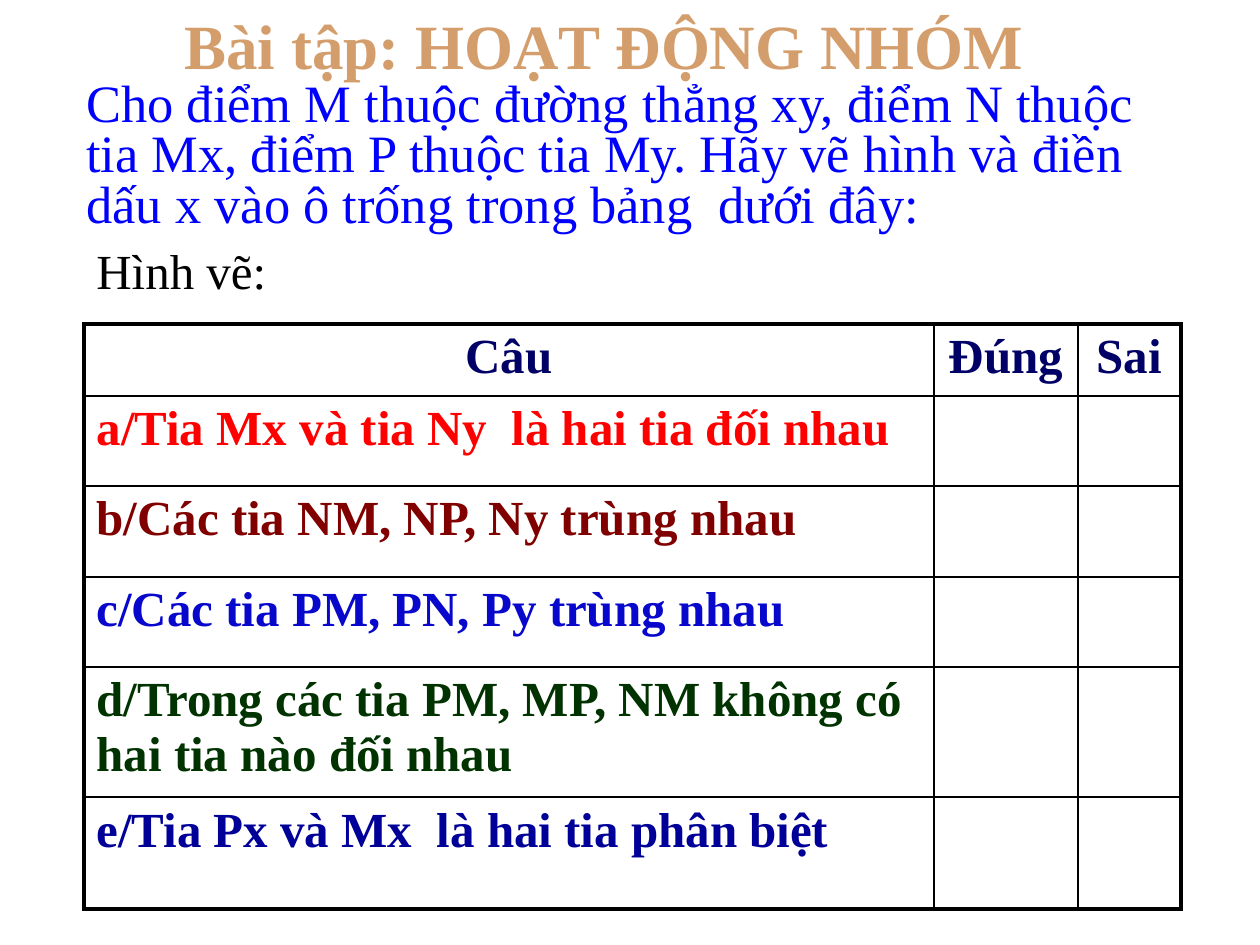
from lxml import etree
from pptx import Presentation
from pptx import util as u
from pptx.dml.color import RGBColor
from pptx.enum import text
from pptx.oxml import ns

PX = 914400 // 126
FONT = "Times New Roman"
TAN = RGBColor(0xD4, 0x9E, 0x6C)
BLUE = RGBColor(0x00, 0x00, 0xFF)
BLACK = RGBColor(0x00, 0x00, 0x00)
NAVY = RGBColor(0x00, 0x00, 0x66)
RED = RGBColor(0xFF, 0x00, 0x00)
MAROON = RGBColor(0x80, 0x00, 0x00)
ROYAL = RGBColor(0x08, 0x07, 0xCC)
GREEN = RGBColor(0x00, 0x33, 0x00)
INDIGO = RGBColor(0x00, 0x00, 0x99)


def write(frame, words, size, color, bold=False, align=text.PP_ALIGN.LEFT):
    frame.text = words
    paragraph = frame.paragraphs[0]
    paragraph.alignment = align
    paragraph.font.name = FONT
    paragraph.font.size = u.Pt(size)
    paragraph.font.bold = bold
    paragraph.font.color.rgb = color
    return paragraph


def add_border(cell, side, width):
    line = etree.SubElement(cell._tc.get_or_add_tcPr(), ns.qn(f"a:{side}"), w=str(u.Pt(width)))
    fill = etree.SubElement(line, ns.qn("a:solidFill"))
    etree.SubElement(fill, ns.qn("a:srgbClr"), val=str(BLACK))


prs = Presentation()
prs.slide_width = 1260 * PX
prs.slide_height = 945 * PX
slide = prs.slides.add_slide(prs.slide_layouts[5])

heading = slide.shapes.title
heading.left, heading.top, heading.width, heading.height = [n * PX for n in (164, 0, 880, 84)]
heading.text_frame.word_wrap = True
heading.text_frame.auto_size = text.MSO_AUTO_SIZE.NONE
heading.text_frame.vertical_anchor = text.MSO_ANCHOR.TOP
write(heading.text_frame, "Bài tập: HOẠT ĐỘNG NHÓM", 36, TAN, True, text.PP_ALIGN.CENTER)

problem = slide.shapes.add_textbox(74 * PX, 76 * PX, 1136 * PX, 165 * PX)
problem.text_frame.word_wrap = True
write(
    problem.text_frame,
    "Cho điểm M thuộc đường thẳng xy, điểm N thuộc tia Mx, điểm P thuộc tia My. "
    "Hãy vẽ hình và điền dấu x vào ô trống trong bảng  dưới đây:",
    30,
    BLUE,
).line_spacing = 0.8

drawing_label = slide.shapes.add_textbox(84 * PX, 234 * PX, 307 * PX, 72 * PX)
drawing_label.text_frame.word_wrap = True
write(drawing_label.text_frame, "Hình vẽ:", 28, BLACK)

headers = ["Câu", "Đúng", "Sai"]
statements = [
    ("a/Tia Mx và tia Ny  là hai tia đối nhau", RED),
    ("b/Các tia NM, NP, Ny trùng nhau", MAROON),
    ("c/Các tia PM, PN, Py trùng nhau", ROYAL),
    ("d/Trong các tia PM, MP, NM không có hai tia nào đối nhau", GREEN),
    ("e/Tia Px và Mx  là hai tia phân biệt", INDIGO),
]
col_widths = [850, 144, 103]
row_heights = [72, 90, 91, 90, 130, 112]
last_row, last_col = len(row_heights) - 1, len(col_widths) - 1

answers = slide.shapes.add_table(
    len(row_heights), len(col_widths),
    84 * PX, 324 * PX, sum(col_widths) * PX, sum(row_heights) * PX,
).table
answers.first_row = False
answers.horz_banding = False
for column, width in zip(answers.columns, col_widths):
    column.width = width * PX
for row, height in zip(answers.rows, row_heights):
    row.height = height * PX

for c, header in enumerate(headers):
    write(answers.cell(0, c).text_frame, header, 28, NAVY, True, text.PP_ALIGN.CENTER)
for r, (statement, color) in enumerate(statements, 1):
    write(answers.cell(r, 0).text_frame, statement, 28, color, True)

for r in range(last_row + 1):
    for c in range(last_col + 1):
        cell = answers.cell(r, c)
        outer = {"lnL": c == 0, "lnR": c == last_col, "lnT": r == 0, "lnB": r == last_row}
        for side, is_outer in outer.items():
            add_border(cell, side, 2.25 if is_outer else 1)
        cell.fill.background()

prs.save("out.pptx")
